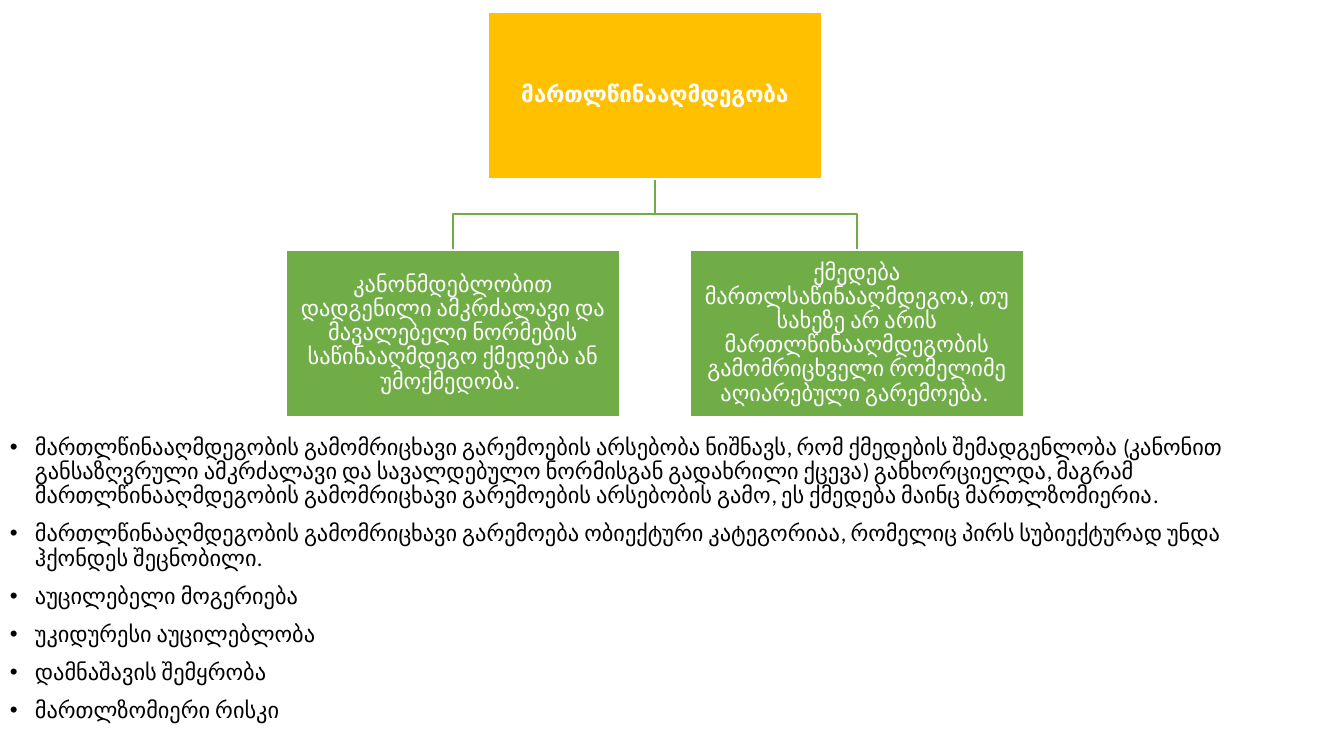
import pptx
import pptx.util
import pptx.dml.color
import pptx.enum.shapes
import pptx.enum.text
import lxml.etree
import pptx.oxml.ns

RGBColor = pptx.dml.color.RGBColor
AMBER = RGBColor(0xFF, 0xC0, 0x00)
GREEN = RGBColor(0x70, 0xAD, 0x47)
WHITE = RGBColor(0xFF, 0xFF, 0xFF)
BLACK = RGBColor(0x00, 0x00, 0x00)

SLIDE_WIDTH, SLIDE_HEIGHT = 1344, 756
EMU_PER_PX = 12192000 / SLIDE_WIDTH
FONT = "Calibri"

# Chart geometry in px
BOX_WIDTH, BOX_HEIGHT = 334, 167
ROOT_CENTER, ROOT_TOP = 655, 12
CHILD_OFFSET, CHILD_TOP = 202, 250

ROOT_TEXT = "მართლწინააღმდეგობა"
CHILD_TEXTS = [
    "კანონმდებლობით დადგენილი ამკრძალავი და მავალებელი ნორმების "
    "საწინააღმდეგო ქმედება ან უმოქმედობა. ",
    "ქმედება მართლსაწინააღმდეგოა, თუ სახეზე არ არის მართლწინააღმდეგობის "
    "გამომრიცხველი რომელიმე აღიარებული გარემოება. ",
]
BULLETS = [
    "მართლწინააღმდეგობის გამომრიცხავი გარემოების არსებობა ნიშნავს, რომ "
    "ქმედების შემადგენლობა (კანონით განსაზღვრული ამკრძალავი და სავალდებულო "
    "ნორმისგან გადახრილი ქცევა) განხორციელდა, მაგრამ მართლწინააღმდეგობის "
    "გამომრიცხავი გარემოების არსებობის გამო, ეს ქმედება მაინც მართლზომიერია.",
    "მართლწინააღმდეგობის გამომრიცხავი გარემოება ობიექტური კატეგორიაა, "
    "რომელიც პირს სუბიექტურად უნდა ჰქონდეს შეცნობილი.",
    "აუცილებელი მოგერიება",
    "უკიდურესი აუცილებლობა",
    "დამნაშავის შემყრობა",
    "მართლზომიერი რისკი",
]


def px(length):
    return pptx.util.Emu(round(length * EMU_PER_PX))


def set_margins(text_frame, horizontal, vertical):
    text_frame.margin_left = text_frame.margin_right = px(horizontal)
    text_frame.margin_top = text_frame.margin_bottom = px(vertical)


def write_run(paragraph, text, color, bold=False):
    paragraph.line_spacing = 0.9
    run = paragraph.add_run()
    run.text = text
    run.font.name = FONT
    run.font.size = pptx.util.Pt(16)
    run.font.bold = bold
    run.font.color.rgb = color


def add_box(slide, center, top, text, fill, bold=False):
    shape = slide.shapes.add_shape(
        pptx.enum.shapes.MSO_SHAPE.RECTANGLE,
        px(center - BOX_WIDTH / 2), px(top), px(BOX_WIDTH), px(BOX_HEIGHT))
    shape.shadow.inherit = False
    shape.fill.solid()
    shape.fill.fore_color.rgb = fill
    shape.line.color.rgb = WHITE
    shape.line.width = pptx.util.Pt(1)
    text_frame = shape.text_frame
    text_frame.word_wrap = True
    text_frame.vertical_anchor = pptx.enum.text.MSO_ANCHOR.MIDDLE
    set_margins(text_frame, 1, 1)
    paragraph = text_frame.paragraphs[0]
    paragraph.alignment = pptx.enum.text.PP_ALIGN.CENTER
    write_run(paragraph, text, WHITE, bold)


def add_branch(slide, child_center):
    start = ROOT_TOP + BOX_HEIGHT
    middle = (start + CHILD_TOP) / 2
    builder = slide.shapes.build_freeform(ROOT_CENTER, start, scale=EMU_PER_PX)
    builder.add_line_segments(
        [(ROOT_CENTER, middle), (child_center, middle), (child_center, CHILD_TOP)],
        close=False)
    shape = builder.convert_to_shape()
    shape.shadow.inherit = False
    shape.fill.background()
    shape.line.color.rgb = GREEN
    shape.line.width = pptx.util.Pt(1)


def set_bullet(paragraph, indent):
    properties = paragraph._p.get_or_add_pPr()
    properties.set("marL", str(px(indent)))
    properties.set("indent", str(-px(indent)))
    for tag, name, value in [("a:buFont", "typeface", "Arial"),
                             ("a:buChar", "char", "•")]:
        element = lxml.etree.SubElement(properties, pptx.oxml.ns.qn(tag))
        element.set(name, value)


def add_bullet_list(slide, left, top, width, height, texts):
    text_frame = slide.shapes.add_textbox(
        px(left), px(top), px(width), px(height)).text_frame
    text_frame.word_wrap = True
    set_margins(text_frame, 10, 0)
    for index, text in enumerate(texts):
        paragraph = text_frame.add_paragraph() if index else text_frame.paragraphs[0]
        paragraph.space_before = pptx.util.Pt(10 if index else 0)
        write_run(paragraph, text, BLACK)
        set_bullet(paragraph, 25)


def main():
    presentation = pptx.Presentation()
    presentation.slide_width = px(SLIDE_WIDTH)
    presentation.slide_height = px(SLIDE_HEIGHT)
    slide = presentation.slides.add_slide(presentation.slide_layouts[6])

    # Explanatory list
    add_bullet_list(slide, 0, 436, 1252, 320, BULLETS)

    # Hierarchy: branches lie behind the boxes
    child_centers = [ROOT_CENTER - CHILD_OFFSET, ROOT_CENTER + CHILD_OFFSET]
    for center in child_centers:
        add_branch(slide, center)
    add_box(slide, ROOT_CENTER, ROOT_TOP, ROOT_TEXT, AMBER, bold=True)
    for center, text in zip(child_centers, CHILD_TEXTS):
        add_box(slide, center, CHILD_TOP, text, GREEN)

    presentation.save("out.pptx")


if __name__ == "__main__":
    main()
